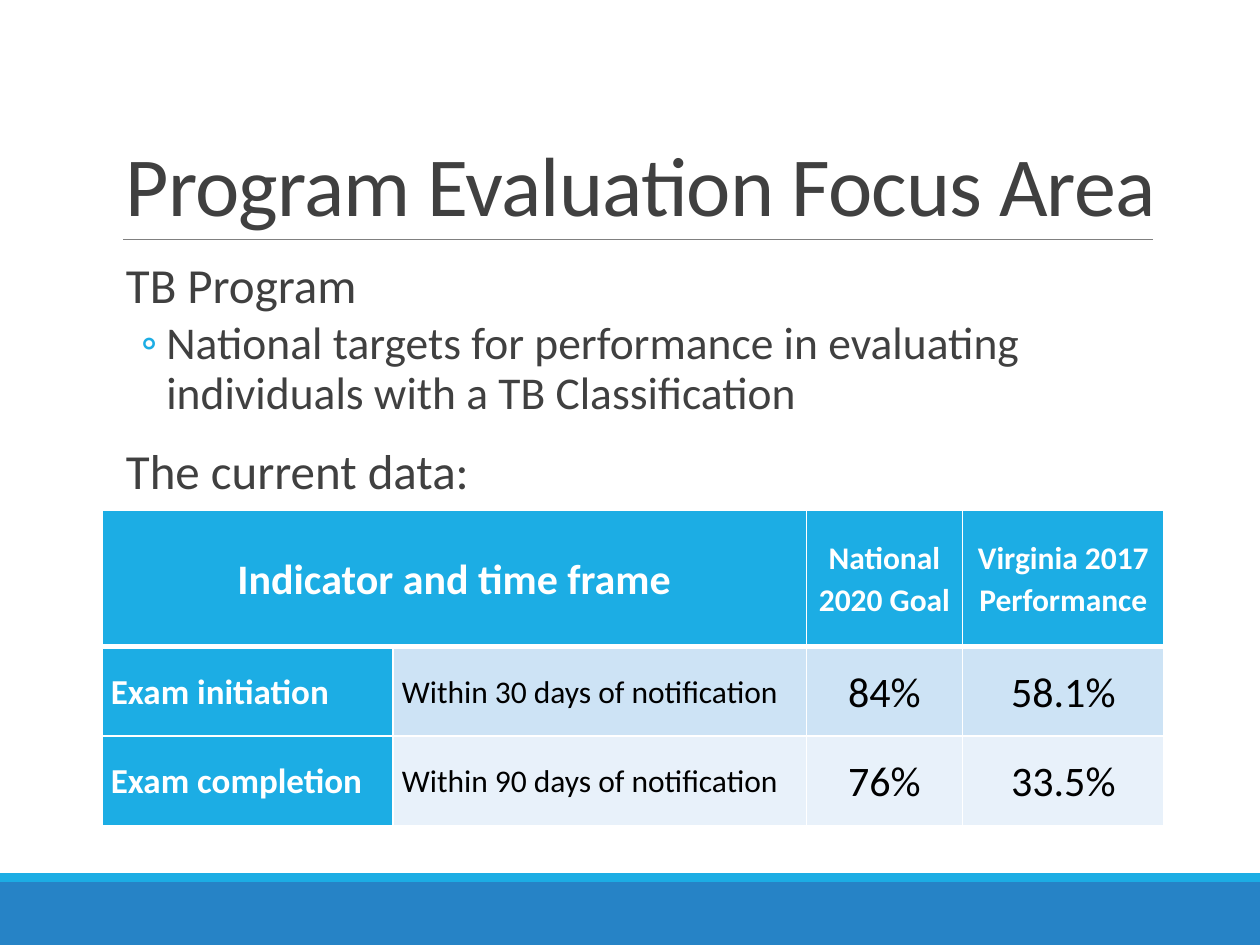
from pptx import Presentation, util as u
from pptx.dml.color import RGBColor
from pptx.enum import shapes, text
from pptx.oxml import parse_xml
from pptx.oxml.ns import nsdecls

WIDTH, HEIGHT = 10, 7.5
FONT = "Calibri"
CYAN, BLUE, GREY, WHITE, BLACK = "1CADE4", "2683C6", "404040", "FFFFFF", "000000"
LEFT_EDGE = 0.09 * WIDTH
COLUMNS = [2.31, 3.28, 1.24, 1.6]
ROWS = [1.08, 0.71, 0.71]
HEADINGS = [("Indicator and time frame", 24), None,
            ("National 2020 Goal", 18), ("Virginia 2017 Performance", 18)]
RECORDS = [
    ("CDE3F5", ["Exam initiation", "Within 30 days of notification", "84%", "58.1%"]),
    ("E8F1FA", ["Exam completion", "Within 90 days of notification", "76%", "33.5%"]),
]
RECORD_SIZES = [20, 18, 24, 24]


def colour(code):
    return RGBColor.from_string(code)


def inches(*lengths):
    return [u.Inches(length) for length in lengths]


def xml(tag, body="", attributes=""):
    return parse_xml(f"<a:{tag} {nsdecls('a')} {attributes}>{body}</a:{tag}>")


def fill_xml(code):
    return f'<a:solidFill><a:srgbClr val="{code}"/></a:solidFill>'


def add_span(para, words, size, code=GREY, bold=False):
    span = para.add_run()
    span.text = words
    span.font.name = FONT
    span.font.size = u.Pt(size)
    span.font.bold = bold
    span.font.color.rgb = colour(code)
    return span


def add_band(page, top, height, code):
    band = page.shapes.add_shape(shapes.MSO_SHAPE.RECTANGLE,
                                 *inches(0, top, WIDTH, height))
    band.shadow.inherit = False
    band.fill.solid()
    band.fill.fore_color.rgb = colour(code)
    band.line.fill.background()


def add_rule(page, left, right, top):
    rule = page.shapes.add_connector(shapes.MSO_CONNECTOR.STRAIGHT,
                                     *inches(left, top, right, top))
    rule.line.color.rgb = colour("808080")
    rule.line.width = u.Pt(0.5)
    rule._element.spPr.append(xml("effectLst"))


def add_box(page, top, width, height, anchor, side_inset):
    box = page.shapes.add_textbox(*inches(LEFT_EDGE, top, width, height))
    frame = box.text_frame
    frame.word_wrap = True
    frame.vertical_anchor = anchor
    frame.margin_left = frame.margin_right = u.Inches(side_inset)
    return frame


def add_title(page, words):
    frame = add_box(page, 0.31, 8.6, 1.59, text.MSO_ANCHOR.BOTTOM, 0.1)
    para = frame.paragraphs[0]
    para.line_spacing = 0.85
    span = add_span(para, words, 48)
    span.font._element.set("spc", "-50")


def style_para(para, before, after, margin, indent):
    para.line_spacing = 0.9
    para.space_before = u.Pt(before)
    para.space_after = u.Pt(after)
    properties = para._p.get_or_add_pPr()
    properties.set("marL", str(u.Inches(margin)))
    properties.set("indent", str(u.Inches(indent)))
    return properties


def add_lead(para, words):
    style_para(para, 12, 2, 0.1, 0).append(xml("buNone"))
    add_span(para, words, 28)


def add_bullet(para, words):
    para.level = 1
    properties = style_para(para, 2, 4, 0.42, -0.2)
    properties.append(xml("buClr", f'<a:srgbClr val="{CYAN}"/>'))
    properties.append(xml("buFont", attributes=f'typeface="{FONT}"'))
    properties.append(xml("buChar", attributes='char="◦"'))
    add_span(para, words, 26)


def add_body(page):
    frame = add_box(page, 2.02, 7.93, 2.06, text.MSO_ANCHOR.TOP, 0)
    add_lead(frame.paragraphs[0], "TB Program")
    add_bullet(frame.add_paragraph(),
               "National targets for performance in evaluating "
               "individuals with a TB Classification")
    add_lead(frame.add_paragraph(), "The current data:")


def border_cell(cell, top, bottom):
    properties = cell._tc.get_or_add_tcPr()
    for side, points in zip("LRTB", (1, 1, top, bottom)):
        properties.append(xml(f"ln{side}", fill_xml(WHITE), f'w="{u.Pt(points)}"'))


def fill_cell(cell, code):
    cell.fill.solid()
    cell.fill.fore_color.rgb = colour(code)


def write_cell(cell, words, size, code, bold, centred):
    cell.vertical_anchor = text.MSO_ANCHOR.MIDDLE
    cell.margin_left = cell.margin_right = u.Inches(0.07)
    cell.margin_top = cell.margin_bottom = 0
    para = cell.text_frame.paragraphs[0]
    para.line_spacing = 1.07
    para.alignment = text.PP_ALIGN.CENTER if centred else text.PP_ALIGN.LEFT
    add_span(para, words, size, code, bold)


def add_results(page):
    table = page.shapes.add_table(len(ROWS), len(COLUMNS), *inches(
        0.81, 4.05, sum(COLUMNS), sum(ROWS))).table
    table.first_row = table.horz_banding = False
    for column, width in zip(table.columns, COLUMNS):
        column.width = u.Inches(width)
    for row, height in zip(table.rows, ROWS):
        row.height = u.Inches(height)
    table.cell(0, 0).merge(table.cell(0, 1))
    for index, heading in enumerate(HEADINGS):
        cell = table.cell(0, index)
        border_cell(cell, 1, 3)
        fill_cell(cell, CYAN)
        if heading:
            write_cell(cell, *heading, WHITE, True, True)
    for row, (tint, values) in enumerate(RECORDS, 1):
        for index, (words, size) in enumerate(zip(values, RECORD_SIZES)):
            cell = table.cell(row, index)
            label = index == 0
            border_cell(cell, 3 if row == 1 else 1, 1)
            fill_cell(cell, CYAN if label else tint)
            write_cell(cell, words, size, WHITE if label else BLACK, label, index > 1)


def main():
    deck = Presentation()
    deck.slide_width, deck.slide_height = inches(WIDTH, HEIGHT)
    page = deck.slides.add_slide(deck.slide_layouts[6])
    add_band(page, 7, 0.5, BLUE)
    add_band(page, 6.93, 0.07, CYAN)
    add_rule(page, 0.98, 9.15, 1.9)
    add_title(page, "Program Evaluation Focus Area")
    add_body(page)
    add_results(page)
    deck.save("out.pptx")


if __name__ == "__main__":
    main()
